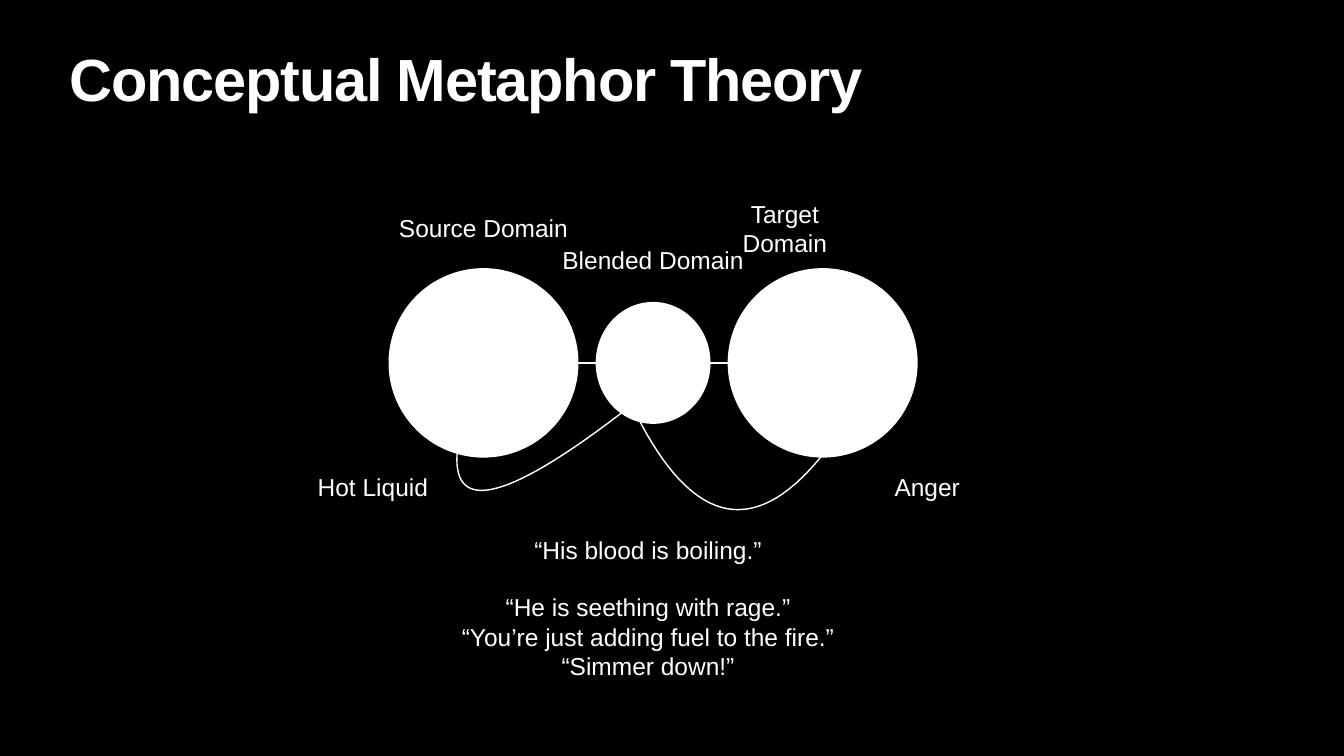
import pptx
import pptx.dml.color
import pptx.enum.shapes
import pptx.enum.text
import pptx.oxml.ns
import pptx.util
from lxml import etree

Inches = pptx.util.Inches
WHITE = "FFFFFF"
BLACK = "000000"
CENTER = pptx.enum.text.PP_ALIGN.CENTER
LEFT = pptx.enum.text.PP_ALIGN.LEFT
TOP = pptx.enum.text.MSO_ANCHOR.TOP
MIDDLE = pptx.enum.text.MSO_ANCHOR.MIDDLE


def color(value):
    """Return an RGB colour from a hex string."""
    return pptx.dml.color.RGBColor.from_string(value)


def apply(target, values):
    """Set every attribute named in a dict of format values."""
    for name, value in values.items():
        setattr(target, name, value)


def write(shape, lines, size, align, anchor, bold=False):
    """Write one formatted paragraph for each line of text."""
    frame = shape.text_frame
    margins = ("margin_left", "margin_top", "margin_right", "margin_bottom")
    apply(frame, dict.fromkeys(margins, Inches(0.06)))
    apply(frame, {"word_wrap": True, "vertical_anchor": anchor,
                  "auto_size": pptx.enum.text.MSO_AUTO_SIZE.NONE})
    for index, line in enumerate(lines):
        para = frame.add_paragraph() if index else frame.paragraphs[0]
        para.alignment = align
        span = para.add_run()
        span.text = line
        apply(span.font, {"name": "Arial", "size": pptx.util.Pt(size), "bold": bold})
        span.font.color.rgb = color(WHITE)
    return frame.paragraphs


def add_text(page, box, lines):
    """Add a centred text box."""
    shape = page.shapes.add_textbox(*map(Inches, box))
    return write(shape, lines, 35, CENTER, MIDDLE)


def add_circle(page, box):
    """Add a plain white ellipse."""
    oval = pptx.enum.shapes.MSO_SHAPE.OVAL
    circle = page.shapes.add_shape(oval, *map(Inches, box))
    circle.shadow.inherit = False
    circle.fill.solid()
    circle.fill.fore_color.rgb = color(WHITE)
    circle.line.fill.background()


def style_line(shape):
    """Give a line or curve its white stroke."""
    shape.line.color.rgb = color(WHITE)
    shape.line.width = pptx.util.Pt(2)


def add_curve(page, left, top, controls, steps=40):
    """Draw a cubic curve through points sampled from four controls."""
    points = []
    for step in range(steps + 1):
        t = step / steps
        weights = ((1 - t) ** 3, 3 * t * (1 - t) ** 2, 3 * t ** 2 * (1 - t), t ** 3)
        points.append(tuple(
            Inches(start + sum(w * c[axis] for w, c in zip(weights, controls)))
            for axis, start in enumerate((left, top))))
    builder = page.shapes.build_freeform(*points[0])
    builder.add_line_segments(points[1:], close=False)
    curve = builder.convert_to_shape()
    curve.shadow.inherit = False
    curve.fill.background()
    style_line(curve)


def build_title(page, box):
    """Place and format the title."""
    title = page.shapes.title
    apply(title, dict(zip(("left", "top", "width", "height"), map(Inches, box))))
    para = write(title, ["Conceptual Metaphor Theory"], 85, LEFT, TOP, True)[0]
    para.line_spacing = 0.8
    para.runs[0].font._element.set("spc", "-170")


def build_diagram(page, box):
    """Draw the domains, their links and their labels."""
    left, top, width, height = box
    diameter = 3.77
    middle = top + height / 2
    source_x = left + diameter / 2
    target_x = left + width - diameter / 2
    blend_x = (source_x + target_x) / 2

    for x in (source_x, target_x):
        add_circle(page, (x - diameter / 2, top, diameter, height))
    link = page.shapes.add_connector(
        pptx.enum.shapes.MSO_CONNECTOR.STRAIGHT,
        *map(Inches, (source_x, middle, target_x, middle)))
    style_line(link)
    etree.SubElement(link._element.spPr, pptx.oxml.ns.qn("a:effectLst"))
    add_circle(page, (blend_x - 1.14, middle - 1.21, 2.28, 2.42))

    add_curve(page, left, top, ((1.36, 3.69), (1.27, 5.14), (2.92, 4.4), (6.32, 1.49)))
    add_curve(page, left, top, ((4.94, 2.95), (6.26, 5.53), (7.74, 5.4), (9.38, 2.56)))

    labels = (
        ("Source Domain", source_x, -0.79, 3.6),
        ("Target Domain", target_x - 0.75, -0.79, 1.8),
        ("Blended Domain", blend_x, -0.17, 3.8),
        ("Hot Liquid", left - 0.31, 4.35, 2.4),
        ("Anger", left + width + 0.19, 4.35, 1.5),
    )
    for text, x, y, span in labels:
        add_text(page, (x - span / 2, top + y - 0.34, span, 0.67), [text])


def build_examples(page, box):
    """List the example sentences, with a gap after the first."""
    paras = add_text(page, box, [
        "“His blood is boiling.”",
        "“He is seething with rage.”",
        "“You’re just adding fuel to the fire.”",
        "“Simmer down!”",
    ])
    paras[0].space_after = pptx.util.Pt(40)


def main():
    """Build and save the deck."""
    deck = pptx.Presentation()
    apply(deck, {"slide_width": Inches(26.67), "slide_height": Inches(15)})
    page = deck.slides.add_slide(deck.slide_layouts[5])
    page.background.fill.solid()
    page.background.fill.fore_color.rgb = color(BLACK)
    build_title(page, (1.32, 1.04, 24.03, 1.57))
    build_diagram(page, (7.71, 5.32, 10.5, 3.76))
    build_examples(page, (9.02, 10.59, 7.68, 2.94))
    deck.save("out.pptx")


if __name__ == "__main__":
    main()
